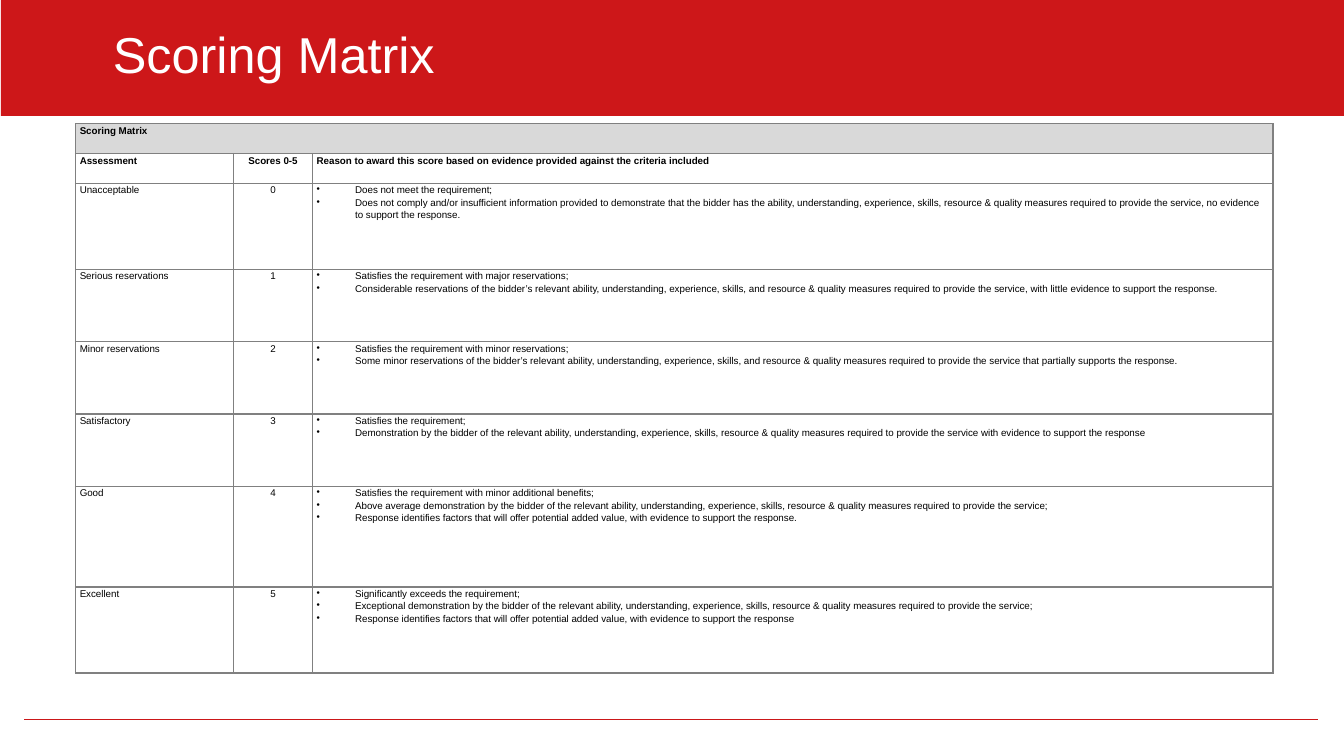
import pptx
import pptx.util
import pptx.dml.color
import pptx.enum.shapes
import pptx.enum.text
import pptx.oxml
import pptx.oxml.ns

Cm = pptx.util.Cm
Pt = pptx.util.Pt
Align = pptx.enum.text.PP_ALIGN

FONT = "Arial"
COLORS = {"band": "CD1719", "rule": "CB1719", "head": "D9D9D9",
          "grid": "808080", "text": "000000", "title": "FFFFFF"}
WIDTHS = [3.99, 1.98, 24.21]
HEIGHTS = [0.75, 0.75, 2.17, 1.82, 1.82, 1.82, 2.54, 2.17]
HEADS = ["Assessment", "Scores 0-5",
         "Reason to award this score based on evidence provided against the criteria included"]
SKILLS = "ability, understanding, experience, skills, resource & quality measures required to provide the service"
SKILLS_AND = SKILLS.replace("skills, resource", "skills, and resource")
ADDED = "Response identifies factors that will offer potential added value, with evidence to support the response"
GRADES = [
    ("Unacceptable", [
        "Does not meet the requirement;",
        "Does not comply and/or insufficient information provided to demonstrate that the bidder has the "
        f"{SKILLS}, no evidence to support the response."]),
    ("Serious reservations", [
        "Satisfies the requirement with major reservations;",
        f"Considerable reservations of the bidder’s relevant {SKILLS_AND}, "
        "with little evidence to support the response."]),
    ("Minor reservations", [
        "Satisfies the requirement with minor reservations;",
        f"Some minor reservations of the bidder’s relevant {SKILLS_AND} "
        "that partially supports the response."]),
    ("Satisfactory", [
        "Satisfies the requirement;",
        f"Demonstration by the bidder of the relevant {SKILLS} with evidence to support the response"]),
    ("Good", [
        "Satisfies the requirement with minor additional benefits;",
        f"Above average demonstration by the bidder of the relevant {SKILLS};",
        f"{ADDED}."]),
    ("Excellent", [
        "Significantly exceeds the requirement;",
        f"Exceptional demonstration by the bidder of the relevant {SKILLS};",
        ADDED]),
]


def color(name):
    """Return the named colour."""
    return pptx.dml.color.RGBColor.from_string(COLORS[name])


def style(para, size, tint, bold=False):
    """Format every run of a paragraph."""
    for run in para.runs:
        run.font.name = FONT
        run.font.size = Pt(size)
        run.font.bold = bold
        run.font.color.rgb = color(tint)


def add_band(slide):
    """Draw the red band behind the title."""
    band = slide.shapes.add_shape(pptx.enum.shapes.MSO_SHAPE.RECTANGLE,
                                  Cm(0.02), 0, Cm(33.85), Cm(2.92))
    band.shadow.inherit = False
    band.fill.solid()
    band.fill.fore_color.rgb = color("band")
    band.line.fill.background()
    slide.shapes.title.element.addprevious(band.element)


def add_rule(slide):
    """Draw the thin line at the foot."""
    rule = slide.shapes.add_connector(pptx.enum.shapes.MSO_CONNECTOR.STRAIGHT,
                                      Cm(0.61), Cm(18.11), Cm(33.22), Cm(18.11))
    rule.line.color.rgb = color("rule")
    rule.line.width = Pt(0.25)
    props = rule.element.spPr
    props.append(props.makeelement(pptx.oxml.ns.qn("a:effectLst"), {}))


def set_title(slide, text):
    """Place and format the title."""
    title = slide.shapes.title
    title.left, title.top = Cm(2.59), Cm(0.43)
    title.width, title.height = Cm(31.55), Cm(1.68)
    frame = title.text_frame
    frame.text = text
    frame.auto_size = pptx.enum.text.MSO_AUTO_SIZE.NONE
    frame.vertical_anchor = pptx.enum.text.MSO_ANCHOR.BOTTOM
    frame.margin_bottom = 0
    frame.paragraphs[0].alignment = Align.LEFT
    style(frame.paragraphs[0], 36, "title")


def add_bullet(para):
    """Give a paragraph a hanging bullet."""
    props = para._p.get_or_add_pPr()
    props.set("marL", str(Cm(0.97)))
    props.set("indent", str(-Cm(0.97)))
    mark = props.makeelement(pptx.oxml.ns.qn("a:buChar"), {"char": "•"})
    props.append(mark)


def add_edges(cell):
    """Draw grey lines on all four sides of a cell."""
    props = cell._tc.get_or_add_tcPr()
    for side in "LRTB":
        props.append(pptx.oxml.parse_xml(
            f'<a:ln{side} {pptx.oxml.ns.nsdecls("a")} w="{Pt(1)}"><a:solidFill>'
            f'<a:srgbClr val="{COLORS["grid"]}"/></a:solidFill></a:ln{side}>'))


def fill_cell(cell, lines, bold=False, center=False, bullet=False):
    """Write the lines of one cell."""
    cell.margin_left = cell.margin_right = Cm(0.11)
    cell.margin_top = cell.margin_bottom = 0
    cell.text_frame.text = "\n".join(lines)
    for para in cell.text_frame.paragraphs:
        para.alignment = Align.CENTER if center else Align.LEFT
        para.line_spacing = 1.15
        para.space_after = Pt(0 if bullet else 10)
        style(para, 7, "text", bold)
        if bullet:
            add_bullet(para)


def add_matrix(slide):
    """Build the table of scores."""
    table = slide.shapes.add_table(len(HEIGHTS), len(WIDTHS), Cm(1.9), Cm(3.12),
                                   Cm(sum(WIDTHS)), Cm(sum(HEIGHTS))).table
    table.first_row = table.horz_banding = False
    for col, width in zip(table.columns, WIDTHS):
        col.width = Cm(width)
    for row, height in zip(table.rows, HEIGHTS):
        row.height = Cm(height)
    for cell in table.iter_cells():
        add_edges(cell)
        cell.fill.background()
    head = table.cell(0, 0)
    head.merge(table.cell(0, 2))
    head.fill.solid()
    head.fill.fore_color.rgb = color("head")
    fill_cell(head, ["Scoring Matrix"], bold=True)
    for col, text in enumerate(HEADS):
        fill_cell(table.cell(1, col), [text], bold=True, center=col == 1)
    for score, (grade, reasons) in enumerate(GRADES):
        row = score + 2
        fill_cell(table.cell(row, 0), [grade])
        fill_cell(table.cell(row, 1), [str(score)], center=True)
        fill_cell(table.cell(row, 2), reasons, bullet=True)


def main():
    """Build and save the slide."""
    deck = pptx.Presentation()
    deck.slide_width, deck.slide_height = Cm(33.87), Cm(19.05)
    slide = deck.slides.add_slide(deck.slide_layouts[5])
    add_band(slide)
    set_title(slide, "Scoring Matrix")
    add_rule(slide)
    add_matrix(slide)
    deck.save("out.pptx")


if __name__ == "__main__":
    main()
